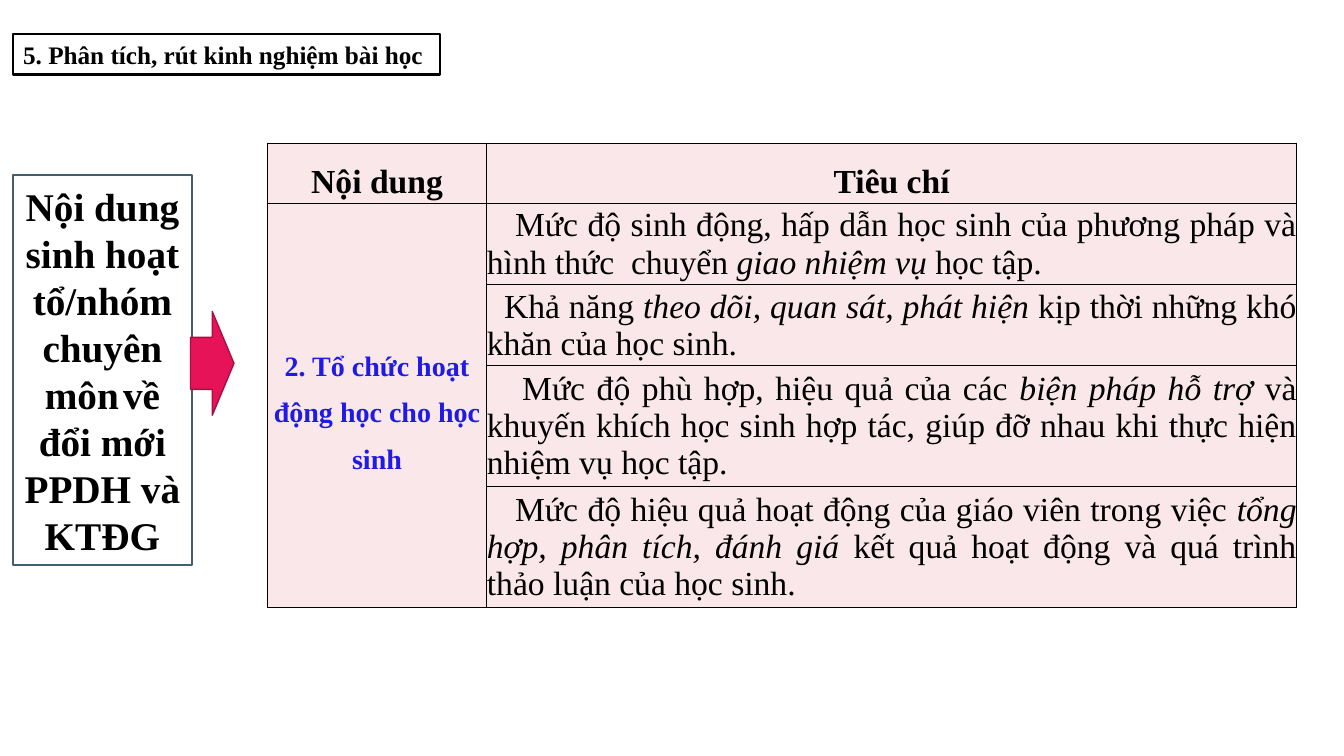
from lxml import etree
from pptx import Presentation
from pptx import util as u
from pptx.dml.color import RGBColor
from pptx.enum import shapes, text
from pptx.oxml import ns

THEME = {
    "font": "Times New Roman",
    "ink": "000000", "paper": "FFFFFF", "accent": "1F1BE4", "cell": "FAE7EA",
    "frame": "435E71", "arrow": "E61358", "arrow_edge": "AA0E41",
    "title": 18, "topic": 28, "gap": 12, "table": 24, "group": 20,
}
WIDTH, HEIGHT = u.Inches(13.33), u.Inches(7.5)

TITLE = "5. Phân tích, rút kinh nghiệm bài học"
TOPIC = [("Nội dung sinh hoạt tổ/nhóm chuyên môn", "topic"),
         (" ", "gap"),
         ("về đổi mới PPDH và KTĐG", "topic")]
HEADINGS = ["Nội dung", "Tiêu chí"]
GROUP = "2. Tổ chức hoạt động học cho học sinh"
CRITERIA = [
    (0.28, "Mức độ sinh động, hấp dẫn học sinh của phương pháp và hình thức  chuyển ",
     "giao nhiệm vụ ", "học tập."),
    (0.17, "Khả năng ", "theo dõi, quan sát, phát hiện ",
     "kịp thời những khó khăn của học sinh."),
    (0.35, "Mức độ phù hợp, hiệu quả của các ", "biện pháp hỗ trợ ",
     "và khuyến khích học sinh hợp tác, giúp đỡ nhau khi thực hiện nhiệm vụ học tập."),
    (0.28, "Mức độ hiệu quả hoạt động của giáo viên trong việc ",
     "tổng hợp, phân tích, đánh giá ",
     "kết quả hoạt động và quá trình thảo luận của học sinh."),
]

TITLE_AREA = (0.98, 4.53, 31.73, 5.33)
TOPIC_AREA = (0.98, 23.2, 13.28, 51.6)
ARROW_AREA = (14.18, 41.2, 3.23, 13.73)
TABLE_CORNER = (19.88, 18.93)
COLUMN_SHARES = [16.35, 60.24]
ROW_SHARES = [8, 10.73, 10.73, 16, 16]


def across(share):
    return u.Emu(int(WIDTH * share / 100))


def down(share):
    return u.Emu(int(HEIGHT * share / 100))


def color(name):
    return RGBColor.from_string(THEME[name])


def apply(target, formats):
    for name, value in formats.items():
        setattr(target, name, value)


def add_span(para, words, size, ink="ink", bold=True, italic=False):
    span = para.add_run()
    span.text = words
    apply(span.font, {"name": THEME["font"], "size": u.Pt(THEME[size]),
                      "bold": bold, "italic": italic})
    span.font.color.rgb = color(ink)


def add_box(page, kind, area, fill, edge, weight):
    left, top, width, height = area
    box = page.shapes.add_shape(kind, across(left), down(top), across(width), down(height))
    box.shadow.inherit = False
    if fill:
        box.fill.solid()
        box.fill.fore_color.rgb = color(fill)
    else:
        box.fill.background()
    box.line.color.rgb = color(edge)
    box.line.width = u.Pt(weight)
    return box


def write_box(box, spans, align):
    apply(box.text_frame, {"word_wrap": True, "vertical_anchor": text.MSO_ANCHOR.MIDDLE})
    para = box.text_frame.paragraphs[0]
    para.alignment = align
    for words, size in spans:
        add_span(para, words, size)


def style_cell(cell):
    apply(cell, {"margin_left": 0, "margin_right": 0, "margin_top": 0, "margin_bottom": 0,
                 "vertical_anchor": text.MSO_ANCHOR.MIDDLE})
    properties = cell._tc.get_or_add_tcPr()
    for side in ("lnL", "lnR", "lnT", "lnB"):
        border = etree.SubElement(properties, ns.qn("a:" + side), w=str(u.Pt(1)))
        fill = etree.SubElement(border, ns.qn("a:solidFill"))
        etree.SubElement(fill, ns.qn("a:srgbClr"), val=THEME["ink"])
    cell.fill.solid()
    cell.fill.fore_color.rgb = color("cell")


def cell_para(cell, align, spacing):
    para = cell.text_frame.paragraphs[0]
    apply(para, {"alignment": align, "line_spacing": spacing,
                 "space_before": u.Pt(6), "space_after": u.Pt(6)})
    return para


def add_criteria_table(page):
    left, top = TABLE_CORNER
    table = page.shapes.add_table(
        len(ROW_SHARES), len(COLUMN_SHARES), across(left), down(top),
        across(sum(COLUMN_SHARES)), down(sum(ROW_SHARES))).table
    apply(table, {"first_row": False, "horz_banding": False})
    for column, share in zip(table.columns, COLUMN_SHARES):
        column.width = across(share)
    for row, share in zip(table.rows, ROW_SHARES):
        row.height = down(share)
    for cell in table.iter_cells():
        style_cell(cell)
    table.cell(1, 0).merge(table.cell(len(CRITERIA), 0))

    center, justify = text.PP_ALIGN.CENTER, text.PP_ALIGN.JUSTIFY
    for index, heading in enumerate(HEADINGS):
        add_span(cell_para(table.cell(0, index), center, 1.5), heading, "table")
    add_span(cell_para(table.cell(1, 0), center, 1.5), GROUP, "group", "accent")
    for index, (indent, *parts) in enumerate(CRITERIA, 1):
        para = cell_para(table.cell(index, 1), justify, 1.0)
        para._p.get_or_add_pPr().set("indent", str(u.Inches(indent)))
        for position, words in enumerate(parts):
            add_span(para, words, "table", bold=False, italic=position == 1)


def main():
    deck = Presentation()
    apply(deck, {"slide_width": WIDTH, "slide_height": HEIGHT})
    page = deck.slides.add_slide(deck.slide_layouts[6])
    kinds = shapes.MSO_SHAPE
    topic = add_box(page, kinds.RECTANGLE, TOPIC_AREA, "paper", "frame", 1.5)
    write_box(topic, TOPIC, text.PP_ALIGN.CENTER)
    add_box(page, kinds.RIGHT_ARROW, ARROW_AREA, "arrow", "arrow_edge", 1)
    title = add_box(page, kinds.RECTANGLE, TITLE_AREA, None, "ink", 1.5)
    write_box(title, [(TITLE, "title")], text.PP_ALIGN.LEFT)
    add_criteria_table(page)
    deck.save("out.pptx")


if __name__ == "__main__":
    main()
